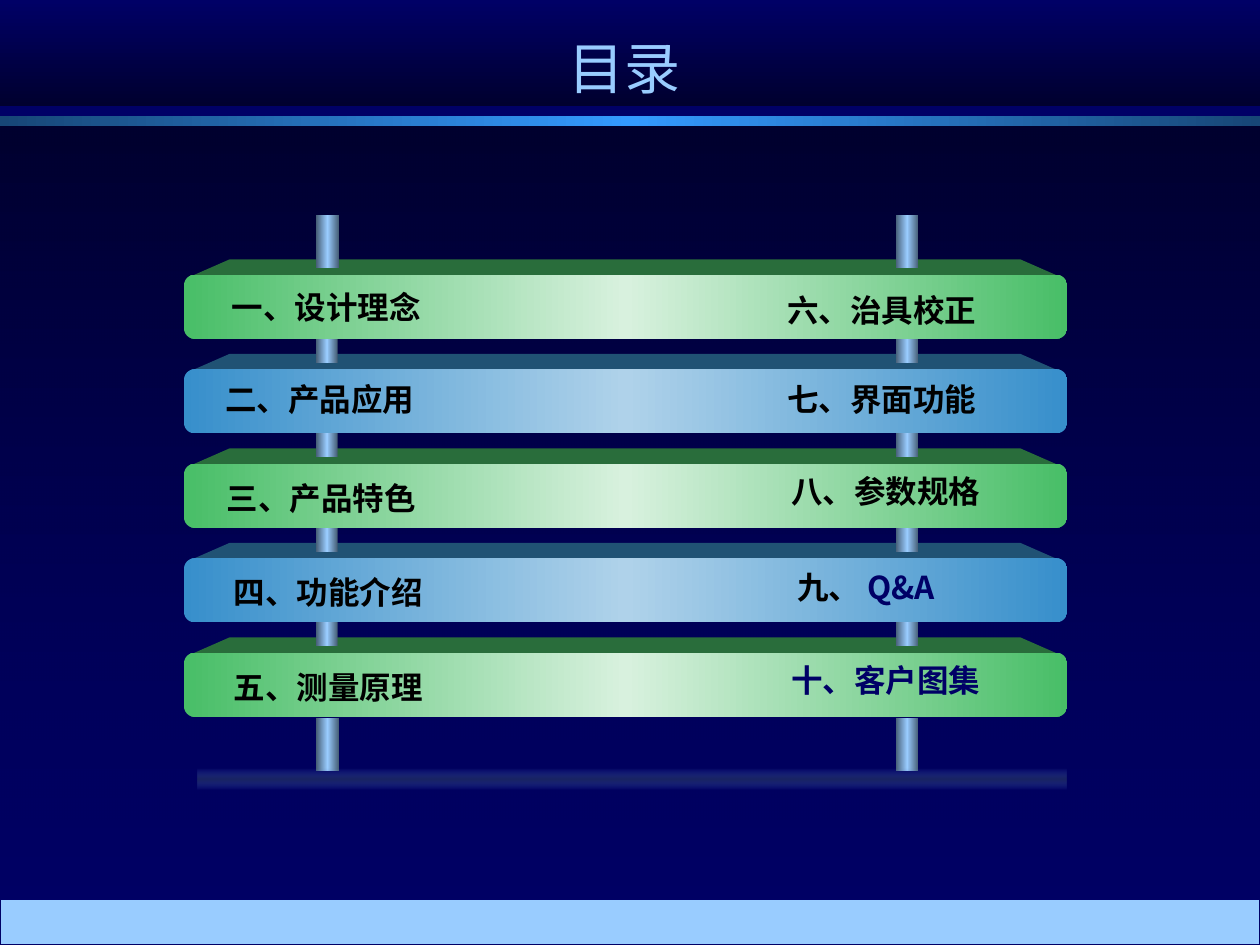
import pptx
import pptx.dml.color
import pptx.enum.shapes
import pptx.enum.text
import pptx.oxml
import pptx.oxml.ns
import pptx.util
from pptx.util import Inches

THEME = {
    "navy": "000066", "sky": "99CCFF", "accent": "3399FF", "black": "000000",
    "green": "48BE67", "green_top": "296D3B", "blue": "378FCB", "blue_top": "205274",
    "shadow": "5F87D7", "title_size": 32, "item_size": 18,
    "title_font": "DejaVu Sans", "font": "Arial", "cjk_font": "Noto Sans CJK SC",
}
DARK = '<a:gamma/><a:shade val="46275"/><a:invGamma/>'
LIGHT = '<a:gamma/><a:tint val="%d"/><a:invGamma/>'
SHAPE = pptx.enum.shapes.MSO_SHAPE


def rgb(key):
    return pptx.dml.color.RGBColor.from_string(THEME[key])


def add_bar(box, key, stops, angle=0, kind=SHAPE.RECTANGLE):
    """Add a borderless shape; stops are (percent, colour modifiers) of one colour."""
    sp = s.shapes.add_shape(kind, *[Inches(v) for v in box])
    sp.shadow.inherit = False
    sp.line.fill.background()
    sp.fill.background()
    gs = "".join(
        f'<a:gs pos="{pos * 1000}"><a:srgbClr val="{THEME[key]}">{mods}</a:srgbClr></a:gs>'
        for pos, mods in stops)
    grad = pptx.oxml.parse_xml(
        f'<a:gradFill {pptx.oxml.ns.nsdecls("a")} rotWithShape="1"><a:gsLst>{gs}</a:gsLst>'
        f'<a:lin ang="{angle * 60000}" scaled="1"/></a:gradFill>')
    old = sp._element.spPr.find(pptx.oxml.ns.qn("a:noFill"))
    old.getparent().replace(old, grad)
    return sp


def add_text(box, runs, size, align=None, bold=True):
    """Add a text box; runs are (text, font key, colour key)."""
    sp = s.shapes.add_textbox(*[Inches(v) for v in box])
    tf = sp.text_frame
    tf.word_wrap = True
    p = tf.paragraphs[0]
    p.alignment = align
    for text, font, color in runs:
        r = p.add_run()
        r.text = text
        r.font.name = THEME[font]
        r.font.size = pptx.util.Pt(THEME[size])
        r.font.bold = bold
        r.font.color.rgb = rgb(color)
    return tf


prs = pptx.Presentation()
prs.slide_width, prs.slide_height = Inches(10), Inches(7.5)
s = prs.slides.add_slide(prs.slide_layouts[6])
s.background.fill.solid()
s.background.fill.fore_color.rgb = rgb("navy")
CENTER = pptx.enum.text.PP_ALIGN.CENTER

# Header band, body shade and divider
add_bar((0, 0, 10, 0.84), "navy", [(0, ""), (100, DARK)], 90)
add_bar((0, 0.99, 10, 6.51), "navy", [(0, DARK), (100, '<a:alpha val="48000"/>')], 90)
add_bar((0, 0.92, 10, 0.08), "accent", [(0, DARK), (50, ""), (100, DARK)])

# Title
tf = add_text((0.25, 0.17, 9.42, 0.73), [("目录", "title_font", "sky")],
              "title_size", CENTER, bold=False)
tf.vertical_anchor = pptx.enum.text.MSO_ANCHOR.MIDDLE

# Five boards with a receding top face
BOARD_TOP, BOARD_STEP, BOARD_H = 2.18, 0.75, 0.51
for i in range(5):
    key, tint = (("green", 21176), ("blue", 39608))[i % 2]
    y = BOARD_TOP + i * BOARD_STEP
    fb = s.shapes.build_freeform(Inches(1.5), Inches(y + 0.02), scale=1.0)
    fb.add_line_segments([(Inches(x), Inches(y + dy)) for x, dy in
                          ((1.82, -0.12), (8.1, -0.12), (8.42, 0.02))], close=True)
    sp = fb.convert_to_shape()
    sp.shadow.inherit = False
    sp.fill.solid()
    sp.fill.fore_color.rgb = rgb(key + "_top")
    sp.line.fill.background()
    sp = add_bar((1.46, y, 7.01, BOARD_H), key,
                 [(0, ""), (50, LIGHT % tint), (100, "")], kind=SHAPE.ROUNDED_RECTANGLE)
    sp.adjustments[0] = 0.167

# Two posts, seen above, between and below the boards
gaps = [(BOARD_TOP + BOARD_H + i * BOARD_STEP, 0.19) for i in range(4)]
for x, gap_w in ((2.51, 0.17), (7.11, 0.18)):
    for y, h in [(1.71, 0.42), *gaps, (5.7, 0.42)]:
        w = gap_w if h < 0.4 else 0.18
        add_bar((x, y, w, h), "sky", [(0, DARK), (50, ""), (100, DARK)])

# Soft ground shadow
clear = '<a:alpha val="0"/>'
add_bar((1.57, 6.1, 6.89, 0.17), "shadow",
        [(0, clear), (50, DARK + '<a:alpha val="58000"/>'), (100, clear)], 90)

# Contents entries
items = [
    (1.74, 2.24, 2, "一、设计理念", None),
    (1.69, 2.97, 1.97, "二、产品应用", None),
    (1.52, 3.75, 2.06, "三、产品特色", CENTER),
    (1.69, 4.5, 1.83, "四、功能介绍", CENTER),
    (1.69, 5.25, 1.83, "五、测量原理", CENTER),
    (6.15, 2.26, 2, "六、治具校正", None),
    (6.15, 2.97, 2, "七、界面功能", None),
    (6.18, 3.7, 2, "八、参数规格", None),
]
for x, y, w, text, align in items:
    add_text((x, y, w, 0.4), [(text, "font", "black")], "item_size", align)
add_text((6.23, 4.46, 2, 0.4),
         [("九、", "font", "black"), (" Q&A", "cjk_font", "navy")], "item_size")
add_text((6.18, 5.2, 2, 0.4), [("十、客户图集", "cjk_font", "navy")], "item_size")

# Footer band
sp = s.shapes.add_shape(SHAPE.RECTANGLE, 0, Inches(7.14), Inches(10), Inches(0.36))
sp.shadow.inherit = False
sp.fill.solid()
sp.fill.fore_color.rgb = rgb("sky")
sp.line.color.rgb = rgb("navy")
sp.line.width = pptx.util.Pt(0.75)

prs.save("out.pptx")
